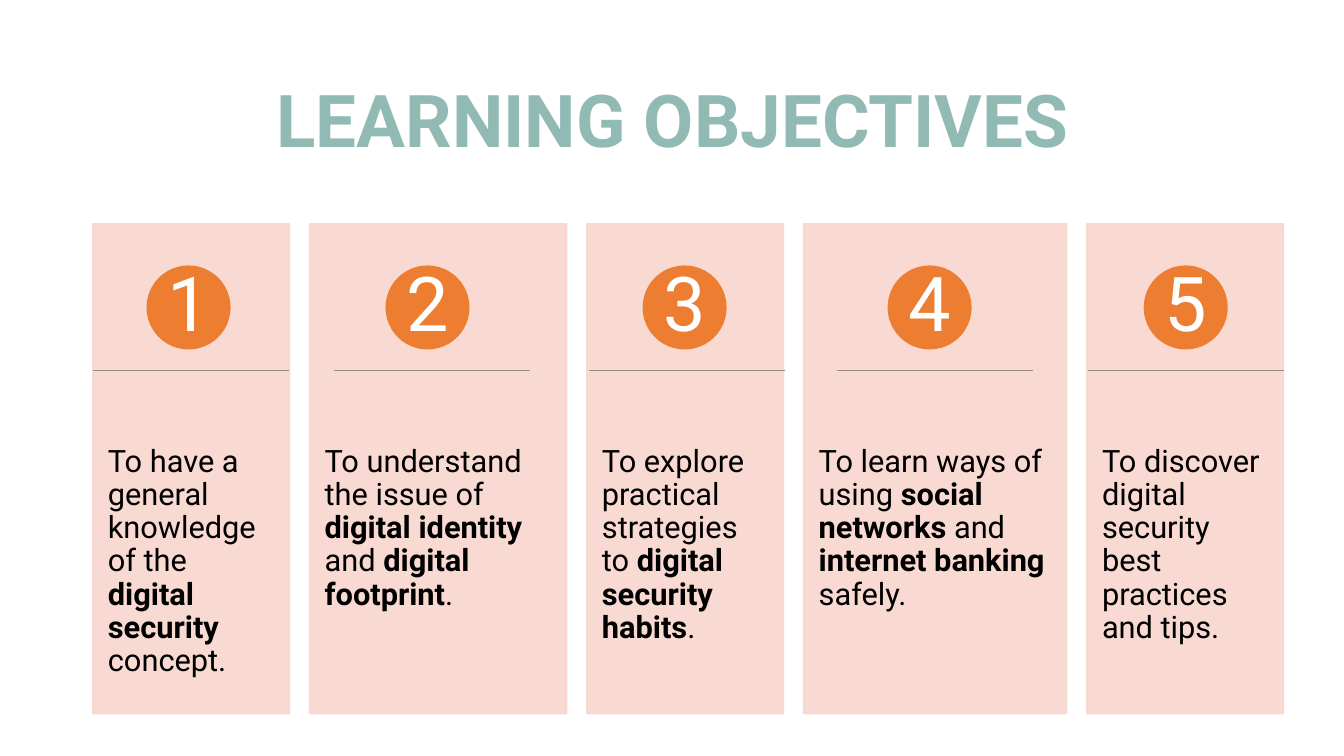
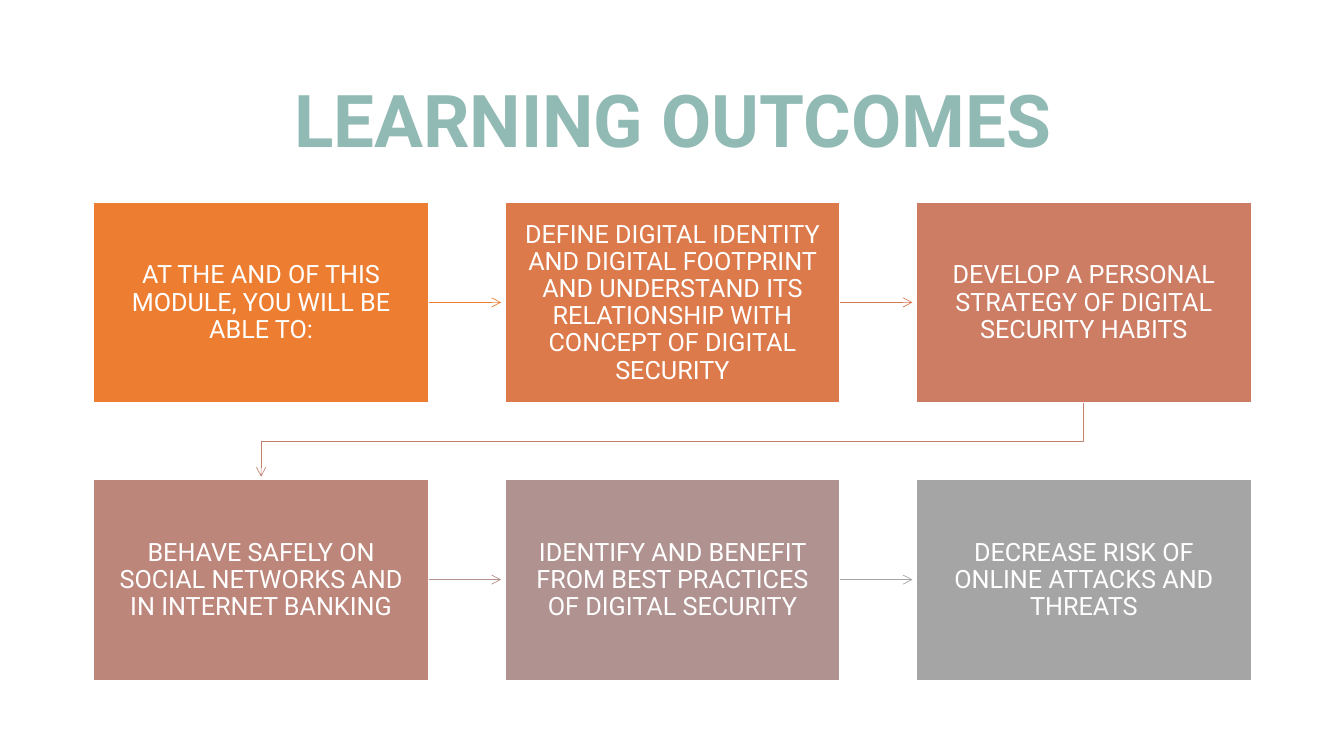
from dataclasses import dataclass

from lxml import etree
from pptx import Presentation
from pptx import util as u
from pptx.dml.color import RGBColor
from pptx.enum import shapes, text
from pptx.oxml import ns

PX = 9144


@dataclass(frozen=True)
class Theme:
    font: str = "Roboto"
    heading: str = "92BAB5"
    card: str = "F8D7CE"
    accent: str = "ED7D31"
    rule: str = "9B8B86"
    ink: str = "000000"
    white: str = "FFFFFF"
    steps: tuple = ("ED7D31", "DC7A4B", "CC7D64", "BD867B", "B09391", "A5A5A5")
    arrows: tuple = ("ED7D31", "D87A51", "C48170", "B4908B", "A5A5A5")
    title_pt: int = 52
    number_pt: int = 54
    card_pt: int = 22
    step_pt: int = 18
    thin_pt: float = 0.5
    edge_pt: int = 1


def px(*values):
    return [u.Emu(round(v * PX)) for v in values]


class Deck:
    def __init__(self, theme):
        self.theme = theme
        self.prs = Presentation()
        self.prs.slide_width, self.prs.slide_height = u.Inches(13.33), u.Inches(7.5)
        self.s = None

    def slide(self, title):
        self.s = self.prs.slides.add_slide(self.prs.slide_layouts[5])
        sp = self.s.shapes.title
        sp.left, sp.top, sp.width, sp.height = px(92, 61, 1150, 124)
        self.label(sp, title, self.theme.title_pt, self.theme.heading)
        sp.text_frame.paragraphs[0].font.bold = True

    def label(self, sp, words, size, colour, align=text.PP_ALIGN.CENTER,
              anchor=text.MSO_ANCHOR.MIDDLE, margins=(10, 5, 10, 5)):
        tf = sp.text_frame
        tf.word_wrap = True
        tf.auto_size = text.MSO_AUTO_SIZE.NONE
        tf.vertical_anchor = anchor
        tf.margin_left, tf.margin_top, tf.margin_right, tf.margin_bottom = px(*margins)
        p = tf.paragraphs[0]
        p.alignment = align
        p.line_spacing = 0.9
        p.font.name = self.theme.font
        p.font.size = u.Pt(size)
        p.font.color.rgb = RGBColor.from_string(colour)
        for i, part in enumerate(words.split("*")):
            r = p.add_run()
            r.text = part
            if i % 2:
                r.font.bold = True

    def shape(self, kind, box, fill, edge, opacity=100):
        sp = self.s.shapes.add_shape(kind, *px(*box))
        sp.shadow.inherit = False
        sp.fill.solid()
        sp.fill.fore_color.rgb = RGBColor.from_string(fill)
        sp.line.color.rgb = RGBColor.from_string(edge)
        sp.line.width = u.Pt(self.theme.edge_pt)
        if opacity < 100:
            for clr in sp._element.spPr.iter(ns.qn("a:srgbClr")):
                etree.SubElement(clr, ns.qn("a:alpha"), val=str(opacity * 1000))
        return sp

    def card(self, box, words):
        t = self.theme
        sp = self.shape(shapes.MSO_SHAPE.RECTANGLE, box, t.card, t.card, opacity=90)
        self.label(sp, words, t.card_pt, t.ink, text.PP_ALIGN.LEFT,
                   text.MSO_ANCHOR.TOP, (15, 220, 15, 36))

    def badge(self, box, number):
        t = self.theme
        sp = self.shape(shapes.MSO_SHAPE.OVAL, box, t.accent, t.accent)
        self.label(sp, str(number), t.number_pt, t.white, margins=(0, 0, 0, 0))

    def step(self, box, words, fill):
        t = self.theme
        sp = self.shape(shapes.MSO_SHAPE.RECTANGLE, box, fill, t.white)
        self.label(sp, words, t.step_pt, t.white, margins=(16, 17, 16, 17))

    def line(self, points, colour, arrow=False):
        pts = [px(*point) for point in points]
        if len(pts) == 2:
            sp = self.s.shapes.add_connector(shapes.MSO_CONNECTOR.STRAIGHT, *pts[0], *pts[1])
        else:
            builder = self.s.shapes.build_freeform(*pts[0])
            builder.add_line_segments(pts[1:], close=False)
            sp = builder.convert_to_shape()
            sp.fill.background()
        sp.line.color.rgb = RGBColor.from_string(colour)
        sp.line.width = u.Pt(self.theme.thin_pt)
        spPr = sp._element.spPr
        if arrow:
            etree.SubElement(spPr.find(ns.qn("a:ln")), ns.qn("a:tailEnd"), type="arrow")
        etree.SubElement(spPr, ns.qn("a:effectLst"))


def objectives(deck):
    deck.slide("LEARNING OBJECTIVES")
    columns = [
        (195, 187, 92, "To have a general knowledge of the *digital security *concept."),
        (255, 424, 331, "To understand the issue of *digital identity *and *digital footprint*."),
        (195, 679, 584, "To explore practical strategies to *digital security habits*."),
        (261, 922, 830, "To learn ways of using *social networks *and *internet banking *safely."),
        (195, 1176, 1079, "To discover digital security best practices and tips."),
    ]
    left, gap, badge, rule_width = 92, 20, 82, 195
    for number, (width, centre, rule, words) in enumerate(columns, 1):
        deck.card((left, 222, width, 486), words)
        deck.badge((centre - badge // 2, 264, badge, badge), number)
        deck.line([(rule, 367), (rule + rule_width, 367)], deck.theme.rule)
        left += width + gap


def outcomes(deck):
    deck.slide("LEARNING OUTCOMES")
    steps = [
        "AT THE AND OF THIS MODULE, YOU WILL BE ABLE TO:",
        "DEFINE DIGITAL IDENTITY AND DIGITAL FOOTPRINT AND UNDERSTAND ITS "
        "RELATIONSHIP WITH CONCEPT OF DIGITAL SECURITY",
        "DEVELOP A PERSONAL STRATEGY OF DIGITAL SECURITY HABITS",
        "BEHAVE SAFELY ON SOCIAL NETWORKS AND IN INTERNET BANKING",
        "IDENTIFY AND BENEFIT FROM BEST PRACTICES OF DIGITAL SECURITY",
        "DECREASE RISK OF ONLINE ATTACKS AND THREATS",
    ]
    width, height, per_row = 332, 199, 3
    boxes = [(93 + 408 * (i % per_row), 201 + 275 * (i // per_row), width, height)
             for i in range(len(steps))]
    for box, words, fill in zip(boxes, steps, deck.theme.steps):
        deck.step(box, words, fill)
    for (x, y, w, h), (nx, ny, nw, nh), colour in zip(boxes, boxes[1:], deck.theme.arrows):
        if y == ny:
            points = [(x + w, y + h // 2), (nx - 4, y + h // 2)]
        else:
            start, end, turn = x + w // 2, nx + nw // 2, (y + h + ny) // 2
            points = [(start, y + h), (start, turn), (end, turn), (end, ny - 3)]
        deck.line(points, colour, arrow=True)


def main():
    deck = Deck(Theme())
    objectives(deck)
    outcomes(deck)
    deck.prs.save("out.pptx")


if __name__ == "__main__":
    main()
